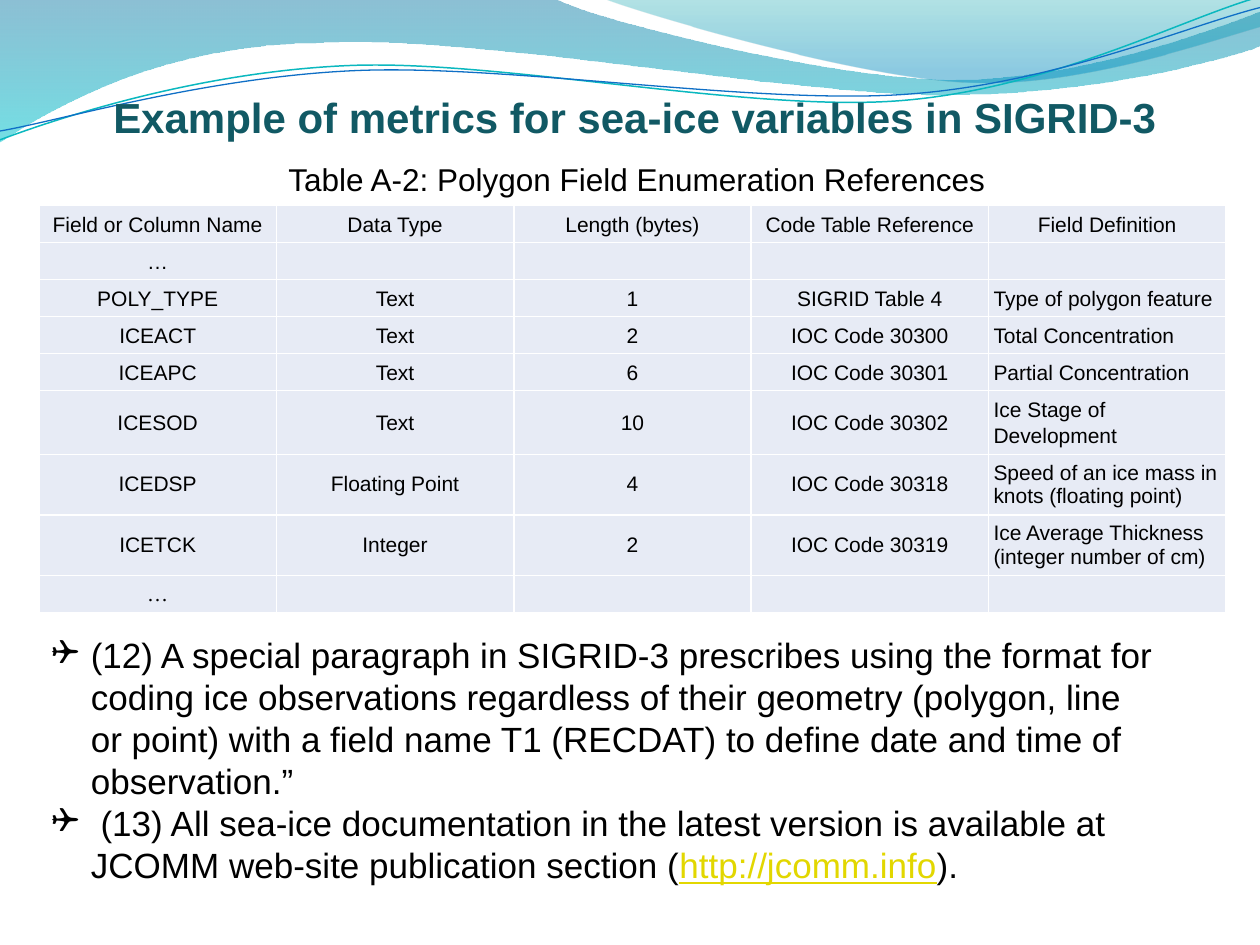
import dataclasses
import math

import pptx
import pptx.dml.color
import pptx.enum.text
import pptx.oxml.ns
import pptx.util
from lxml import etree

PX = 9144  # EMU per px, 100 px to the inch
FONT = "Arial"
BLACK, WHITE, CELL_FILL, LINK = "000000", "FFFFFF", "E7EBF5", "E2D700"
CENTER = pptx.enum.text.PP_ALIGN.CENTER
LEFT = pptx.enum.text.PP_ALIGN.LEFT

Point = tuple[int, int]


@dataclasses.dataclass
class GradientStop:
    position: float
    color: str
    opacity: int


@dataclasses.dataclass
class Wave:
    """Segments hold one point for a line and three for a Bezier curve."""
    start: Point
    segments: list[tuple[Point, ...]]
    stops: tuple[GradientStop, ...] = ()
    line: str = ""
    line_pt: float = 0
    rotation: float = 0
    center: tuple[float, float] = (0, 0)


@dataclasses.dataclass
class FieldRow:
    cells: tuple[str, ...]
    space_before: int = 0
    font: str = FONT
    definition_align: int = LEFT


# Decoration from back to front: two filled bands, two thin lines
WAVES = [
    Wave((0, -1),
         [((440, -1),),
          ((476, 17), (664, 63), (758, 63)), ((853, 63), (958, 26), (1000, 9)),
          ((1001, 36),),
          ((983, 44), (870, 76), (746, 75)), ((622, 75), (382, 28), (257, 34)),
          ((129, 35), (46, 83), (-1, 113)), ((0, -1),)],
         stops=(GradientStop(0, "0074A1", 45), GradientStop(1, "00C6CF", 55))),
    Wave((479, -1),
         [((509, 11), (682, 62), (769, 65)), ((856, 69), (961, 32), (1000, 21)),
          ((1000, 0),), ((479, -1),)],
         stops=(GradientStop(0, "00A1A9", 30), GradientStop(0.8, "008BBF", 45))),
    Wave((0, 111),
         [((48, 93), (158, 57), (277, 52)), ((395, 47), (593, 89), (713, 80)),
          ((833, 71), (938, 15), (998, -2))],
         line="0AB8BF", line_pt=0.85, rotation=357.3, center=(499, 57.5)),
    Wave((0, 104),
         [((47, 96), (164, 61), (283, 56)), ((403, 51), (597, 83), (717, 75)),
          ((836, 67), (941, 21), (1000, 6))],
         line="0F6FC6", line_pt=0.75, rotation=357.3, center=(499.5, 59)),
]

ELLIPSIS = ("…", "", "", "", "")
ROWS = [
    FieldRow(("Field or Column Name", "Data Type", "Length (bytes)",
              "Code Table Reference", "Field Definition"), definition_align=CENTER),
    FieldRow(ELLIPSIS),
    FieldRow(("POLY_TYPE", "Text", "1", "SIGRID Table 4", "Type of polygon feature")),
    FieldRow(("ICEACT", "Text", "2", "IOC Code 30300", "Total Concentration")),
    FieldRow(("ICEAPC", "Text", "6", "IOC Code 30301", "Partial Concentration")),
    FieldRow(("ICESOD", "Text", "10", "IOC Code 30302", "Ice Stage of Development")),
    FieldRow(("ICEDSP", "Floating Point", "4", "IOC Code 30318",
              "Speed of an ice mass in knots (floating point)"), 6),
    FieldRow(("ICETCK", "Integer", "2", "IOC Code 30319",
              "Ice Average Thickness (integer number of cm)"), 6),
    FieldRow(ELLIPSIS, font="Times New Roman"),
]

NOTES = [
    ["(12) A special paragraph in SIGRID-3 prescribes using the format for coding ice "
     "observations regardless of their geometry (polygon, line or point) with a field "
     "name T1 (RECDAT) to define date and time of observation.”"],
    [" (13) All sea-ice documentation in the latest version is available at JCOMM "
     "web-site publication section (", "http://jcomm.info", ")."],
]


def rgb(color: str) -> pptx.dml.color.RGBColor:
    return pptx.dml.color.RGBColor.from_string(color)


def sub(parent, tag: str, **attributes: str):
    return etree.SubElement(parent, pptx.oxml.ns.qn(tag), attributes)


def style(run, size: int, color: str = BLACK, bold: bool = False, font: str = FONT) -> None:
    run.font.name, run.font.size = font, pptx.util.Pt(size)
    run.font.bold, run.font.color.rgb = bold, rgb(color)


def unrotated(point: Point, wave: Wave) -> Point:
    """The point before the wave's rotation, in EMU."""
    angle = math.radians(-wave.rotation)
    dx, dy = point[0] - wave.center[0], point[1] - wave.center[1]
    x = wave.center[0] + dx * math.cos(angle) - dy * math.sin(angle)
    y = wave.center[1] + dx * math.sin(angle) + dy * math.cos(angle)
    return round(x * PX), round(y * PX)


def bend(shape, wave: Wave) -> None:
    """Merge each run of three straight segments into its Bezier curve."""
    lines = iter(list(shape._element.iter(pptx.oxml.ns.qn("a:lnTo"))))
    for segment in wave.segments:
        first, *others = [next(lines) for _ in segment]
        if others:
            curve = etree.Element(pptx.oxml.ns.qn("a:cubicBezTo"))
            first.addprevious(curve)
            for line in (first, *others):
                curve.append(line[0])
                line.getparent().remove(line)


def draw_wave(slide, wave: Wave) -> None:
    builder = slide.shapes.build_freeform(*unrotated(wave.start, wave), scale=1.0)
    points = [unrotated(point, wave) for segment in wave.segments for point in segment]
    builder.add_line_segments(points, close=bool(wave.stops))
    band = builder.convert_to_shape()
    bend(band, wave)
    band.rotation = wave.rotation
    band.shadow.inherit = False
    if not wave.stops:
        band.fill.background()
        band.line.color.rgb = rgb(wave.line)
        band.line.width = pptx.util.Pt(wave.line_pt)
        return
    band.line.fill.background()
    band.fill.gradient()
    band.fill.gradient_angle = 270
    for target, stop in zip(band.fill.gradient_stops, wave.stops):
        target.position, target.color.rgb = stop.position, rgb(stop.color)
    colors = list(band._element.spPr.iter(pptx.oxml.ns.qn("a:srgbClr")))
    for color, stop in zip(colors, wave.stops):
        sub(color, "a:alpha", val=str(stop.opacity * 1000))


def add_text_frame(slide, left: int, top: int, width: int, height: int):
    frame = slide.shapes.add_textbox(left * PX, top * PX, width * PX, height * PX).text_frame
    frame.word_wrap = True
    frame.auto_size = pptx.enum.text.MSO_AUTO_SIZE.SHAPE_TO_FIT_TEXT
    return frame


def draw_heading(slide, text: str, box: tuple[int, int, int, int], size: int,
                 color: str = BLACK, bold: bool = False) -> None:
    frame = add_text_frame(slide, *box)
    frame.text = text
    frame.paragraphs[0].alignment = CENTER
    style(frame.paragraphs[0].runs[0], size, color, bold)


def fill_cell(cell, text: str, row: FieldRow, align: int) -> None:
    cell.fill.solid()
    cell.fill.fore_color.rgb = rgb(CELL_FILL)
    cell.vertical_anchor = pptx.enum.text.MSO_ANCHOR.MIDDLE
    cell.margin_left = cell.margin_right = cell.margin_top = cell.margin_bottom = 4 * PX
    paragraph = cell.text_frame.paragraphs[0]
    paragraph.text, paragraph.alignment = text, align
    if row.space_before:
        paragraph.space_before = pptx.util.Pt(row.space_before)
    else:
        paragraph.line_spacing = 1.07
    for run in paragraph.runs:
        style(run, 12, font=row.font)
    if not text:
        sub(paragraph._p, "a:endParaRPr", sz="1200")
    # Borders come before the fill in the cell properties
    for index, side in enumerate(("a:lnL", "a:lnR", "a:lnT", "a:lnB")):
        border = sub(cell._tc.tcPr, side, w="12700")
        sub(sub(border, "a:solidFill"), "a:srgbClr", val=WHITE)
        cell._tc.tcPr.insert(index, border)


def draw_table(slide, left: int, top: int, width: int, height: int) -> None:
    columns = len(ROWS[0].cells)
    frame = slide.shapes.add_table(
        len(ROWS), columns, left * PX, top * PX, width * PX, height * PX)
    table = frame.table
    table.first_row = table.horz_banding = False
    for r, row in enumerate(ROWS):
        table.rows[r].height = 0  # rows grow to fit their text
        for c, text in enumerate(row.cells):
            align = row.definition_align if c == columns - 1 else CENTER
            fill_cell(table.cell(r, c), text, row, align)
    frame.height = height * PX


def draw_notes(slide) -> None:
    frame = add_text_frame(slide, 31, 498, 899, 212)
    indent = pptx.util.Pt(22.5)
    for index, parts in enumerate(NOTES):
        paragraph = frame.add_paragraph() if index else frame.paragraphs[0]
        properties = paragraph._p.get_or_add_pPr()
        properties.set("marL", str(indent))
        properties.set("indent", str(-indent))
        sub(properties, "a:buFont", typeface="Wingdings")
        sub(properties, "a:buChar", char="❑")
        for part in parts:
            run = paragraph.add_run()
            run.text = part
            is_link = part.startswith("http")
            style(run, 20, LINK if is_link else BLACK)
            run.font.underline = is_link


def main() -> None:
    deck = pptx.Presentation()
    deck.slide_width, deck.slide_height = 1000 * PX, 750 * PX
    slide = deck.slides.add_slide(deck.slide_layouts[6])
    for wave in WAVES:
        draw_wave(slide, wave)
    draw_heading(slide, "Example of metrics for sea-ice variables in SIGRID-3",
                 (31, 68, 946, 50), 24, "115964", True)
    draw_table(slide, 31, 163, 942, 322)
    draw_heading(slide, "Table A-2: Polygon Field Enumeration References",
                 (134, 122, 743, 40), 18)
    draw_notes(slide)
    deck.save("out.pptx")


if __name__ == "__main__":
    main()
